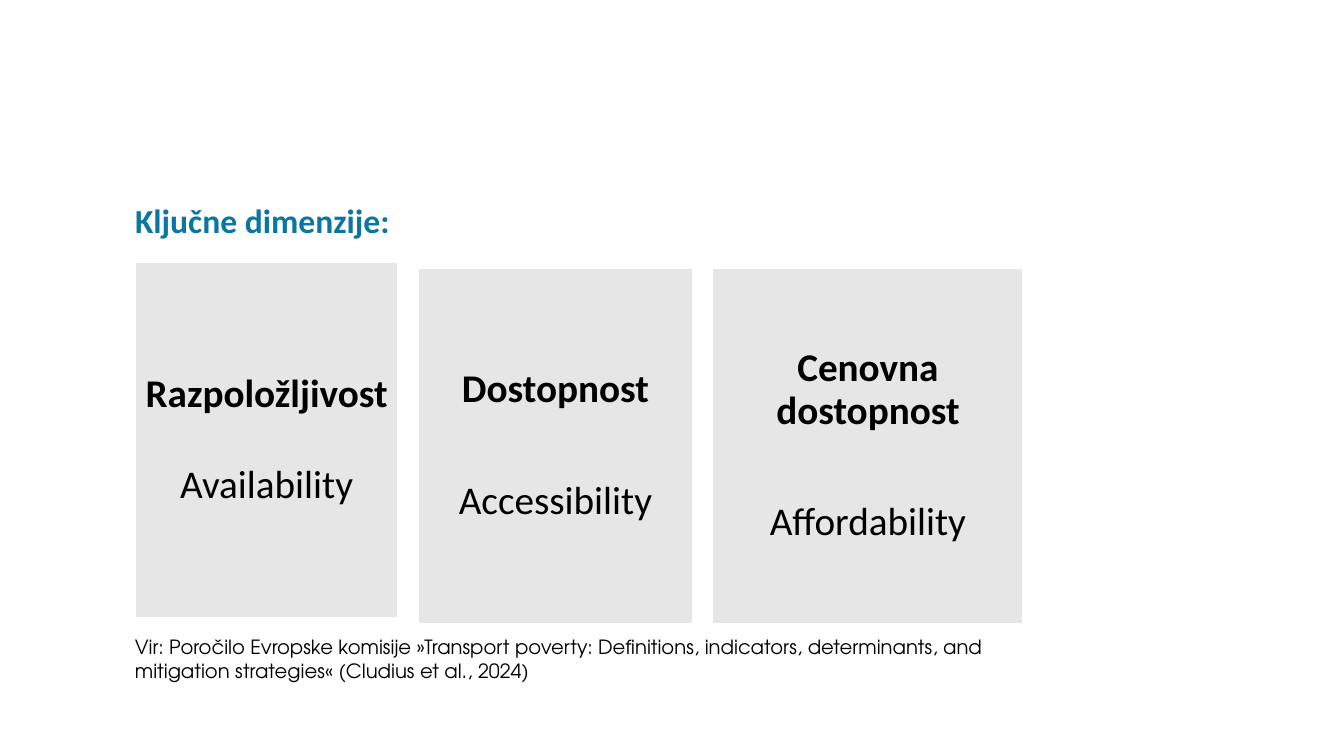
from dataclasses import dataclass

from pptx import Presentation
from pptx.dml.color import RGBColor
from pptx.enum import shapes, text
from pptx.util import Pt

COLORS = {"card": "E7E6E6", "edge": "FFFFFF", "ink": "000000", "title": "0B76A0"}
LEFT, GAP, HEIGHT = 96.48, 14.4, 254.16
TEXT_LEFT = 89.28


@dataclass
class Card:
    name: str
    term: str
    top: float
    width: float
    space: float


CARDS = [
    Card("Razpoložljivost", "Availability", 187.2, 187.92, 35),
    Card("Dostopnost", "Accessibility", 191.52, 195.84, 49.4),
    Card("Cenovna dostopnost", "Affordability", 191.52, 221.76, 49.4),
]


def tint(key: str) -> RGBColor:
    return RGBColor.from_string(COLORS[key])


def style(para, size: float, color: str, bold: bool = False, face: str = "Calibri") -> None:
    for run in para.runs:
        run.font.name = face
        run.font.size = Pt(size)
        run.font.bold = bold
        run.font.color.rgb = tint(color)


def draw_card(slide, card: Card, left: float) -> None:
    box = slide.shapes.add_shape(
        shapes.MSO_SHAPE.RECTANGLE, Pt(left), Pt(card.top), Pt(card.width), Pt(HEIGHT)
    )
    box.shadow.inherit = False
    box.fill.solid()
    box.fill.fore_color.rgb = tint("card")
    box.line.color.rgb = tint("edge")
    box.line.width = Pt(1)
    frame = box.text_frame
    frame.word_wrap = True
    frame.vertical_anchor = text.MSO_ANCHOR.MIDDLE
    frame.margin_left = frame.margin_right = Pt(3.6)
    frame.margin_top = frame.margin_bottom = Pt(3.6)
    frame.text = f"{card.name}\n{card.term}"
    for para, bold in zip(frame.paragraphs, (True, False)):
        para.alignment = text.PP_ALIGN.CENTER
        para.line_spacing = 0.9
        style(para, 28, "ink", bold)
    frame.paragraphs[0].space_after = Pt(card.space)


def draw_title(slide) -> None:
    title = slide.shapes.title
    title.left, title.top = Pt(TEXT_LEFT), Pt(138.96)
    title.width, title.height = Pt(379.44), Pt(65.52)
    frame = title.text_frame
    frame.text = "Ključne dimenzije:"
    frame.word_wrap = True
    frame.auto_size = text.MSO_AUTO_SIZE.NONE
    frame.vertical_anchor = text.MSO_ANCHOR.TOP
    para = frame.paragraphs[0]
    para.alignment = text.PP_ALIGN.LEFT
    style(para, 24, "title", True)


def draw_source(slide) -> None:
    box = slide.shapes.add_textbox(Pt(TEXT_LEFT), Pt(450), Pt(642.24), Pt(41.04))
    frame = box.text_frame
    frame.word_wrap = True
    frame.text = (
        "Vir: Poročilo Evropske komisije »Transport poverty: Definitions, indicators, "
        "determinants, and mitigation strategies« (Cludius et al., 2024)"
    )
    style(frame.paragraphs[0], 14, "ink", face="TeX Gyre Adventor")


def main() -> None:
    deck = Presentation()
    deck.slide_width, deck.slide_height = Pt(960), Pt(540)
    slide = deck.slides.add_slide(deck.slide_layouts[5])
    draw_title(slide)
    left = LEFT
    for card in CARDS:
        draw_card(slide, card, left)
        left += card.width + GAP
    draw_source(slide)
    deck.save("out.pptx")


if __name__ == "__main__":
    main()
